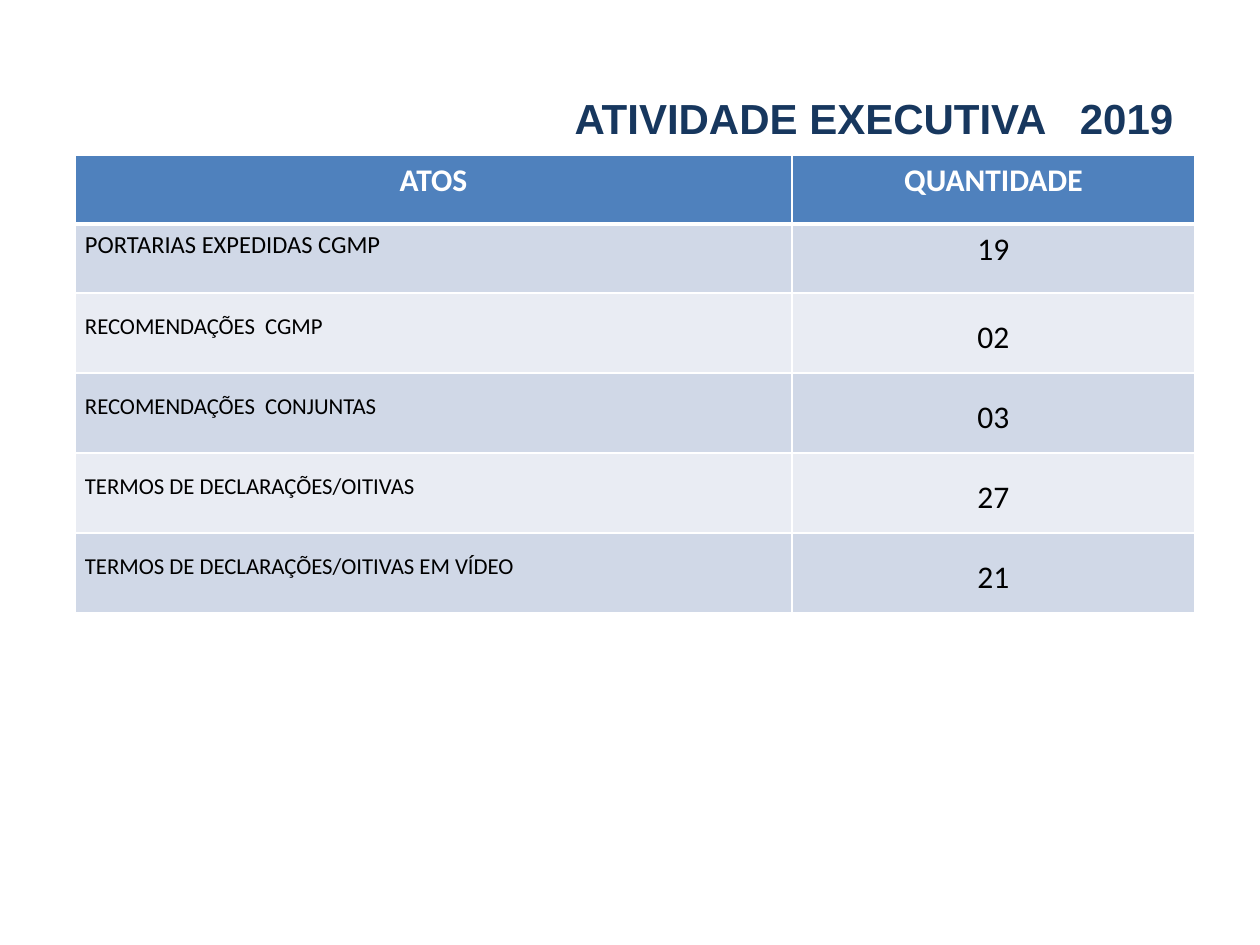
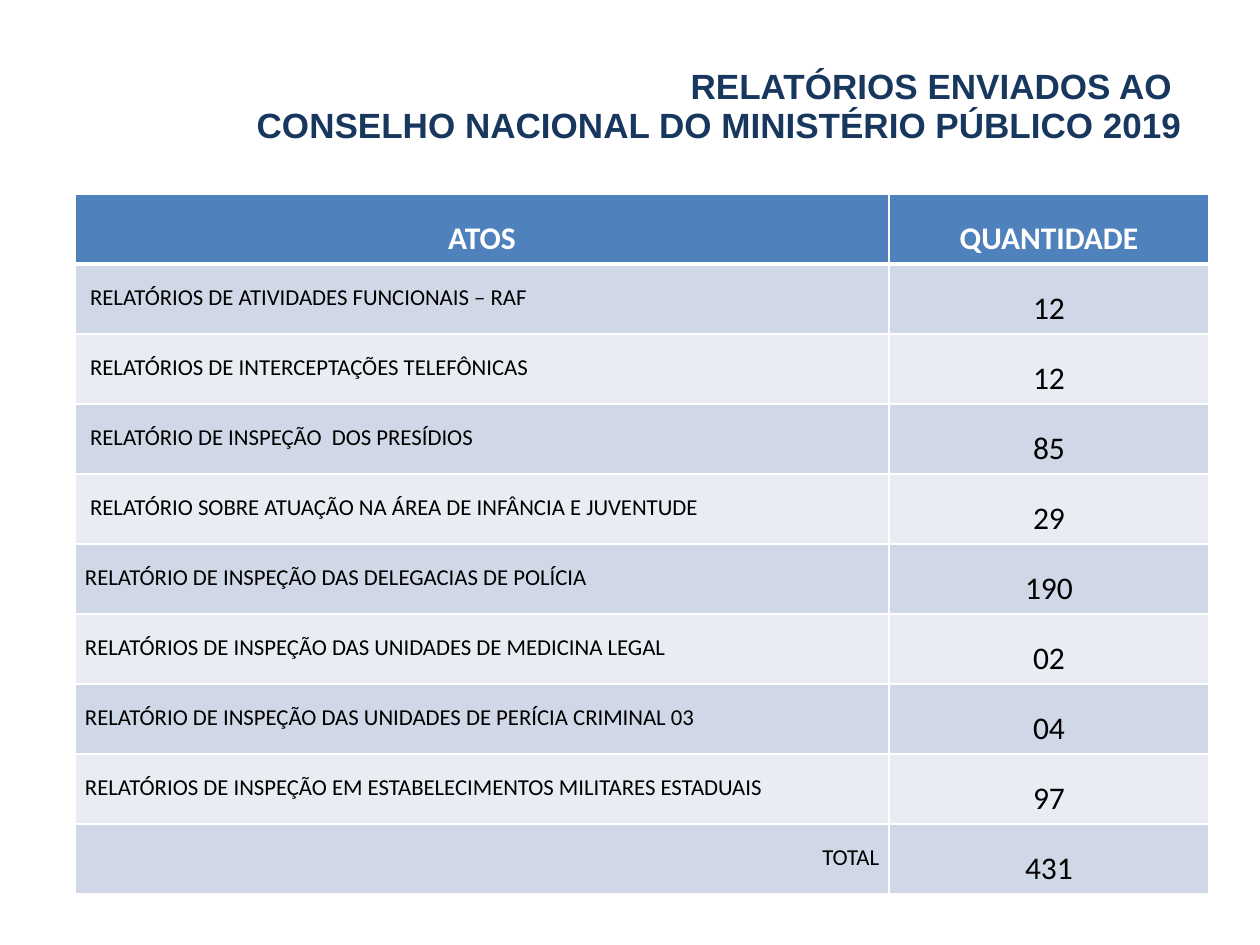
from pptx import Presentation
from pptx.dml.color import RGBColor
from pptx.enum.text import MSO_ANCHOR as Anchor, PP_ALIGN as Align
from pptx.oxml import parse_xml
from pptx.oxml.ns import nsdecls
from pptx.util import Pt

PX = 914400 / 126
NAVY, BLUE, WHITE, BLACK = "17375E", "4F81BD", "FFFFFF", "000000"
BANDS = ["D0D8E7", "E9ECF3"]
THIN, THICK = 0.96, 3


def style(para, align, gap, hue, **form):
    """Set one paragraph's alignment, line spacing and font."""
    para.alignment, para.line_spacing = align, gap
    para.font.color.rgb = RGBColor.from_string(hue)
    for key, value in form.items():
        setattr(para.font, key, value)


def edge(cell, side, width):
    """Draw one white cell border."""
    cell._tc.get_or_add_tcPr().append(parse_xml(
        f'<a:ln{side} {nsdecls("a")} w="{Pt(width)}"><a:solidFill>'
        f'<a:srgbClr val="{WHITE}"/></a:solidFill></a:ln{side}>'))


# Slide content; "tight" counts the leading rows with single line spacing
pages = [
    {"title": "ATIVIDADE EXECUTIVA   2019", "size": 24,
     "box": (64, 65, 1122, 110), "top": 155, "cols": (717, 403),
     "high": (69, 69, 80, 80, 80, 80), "tight": 2,
     "rows": [
         ("PORTARIAS EXPEDIDAS CGMP", "19"),
         ("RECOMENDAÇÕES  CGMP", "02"),
         ("RECOMENDAÇÕES  CONJUNTAS", "03"),
         ("TERMOS DE DECLARAÇÕES/OITIVAS", "27"),
         ("TERMOS DE DECLARAÇÕES/OITIVAS EM VÍDEO", "21")]},
    {"title": "RELATÓRIOS ENVIADOS AO \vCONSELHO NACIONAL DO MINISTÉRIO PÚBLICO 2019",
     "size": 20, "box": (123, 65, 1071, 85), "top": 194, "cols": (814, 320),
     "high": (70,) * 10, "tight": 0,
     "rows": [
         (" RELATÓRIOS DE ATIVIDADES FUNCIONAIS – RAF", "12"),
         (" RELATÓRIOS DE INTERCEPTAÇÕES TELEFÔNICAS", "12"),
         (" RELATÓRIO DE INSPEÇÃO  DOS PRESÍDIOS", "85"),
         (" RELATÓRIO SOBRE ATUAÇÃO NA ÁREA DE INFÂNCIA E JUVENTUDE", "29"),
         ("RELATÓRIO DE INSPEÇÃO DAS DELEGACIAS DE POLÍCIA", "190"),
         ("RELATÓRIOS DE INSPEÇÃO DAS UNIDADES DE MEDICINA LEGAL", "02"),
         ("RELATÓRIO DE INSPEÇÃO DAS UNIDADES DE PERÍCIA CRIMINAL 03", "04"),
         ("RELATÓRIOS DE INSPEÇÃO EM ESTABELECIMENTOS MILITARES ESTADUAIS", "97"),
         ("TOTAL", "431")]},
]

deck = Presentation()
deck.slide_width, deck.slide_height = int(1260 * PX), int(945 * PX)

for page in pages:
    slide = deck.slides.add_slide(deck.slide_layouts[6])

    # Title
    box = slide.shapes.add_textbox(*(int(n * PX) for n in page["box"]))
    frame = box.text_frame
    frame.word_wrap, frame.vertical_anchor = True, Anchor.MIDDLE
    frame.text = page["title"]
    style(frame.paragraphs[0], Align.RIGHT, 0.93, NAVY,
          name="Arial", size=Pt(page["size"]), bold=True)

    # Table grid
    rows = [("ATOS", "QUANTIDADE")] + page["rows"]
    spot = (75, page["top"], sum(page["cols"]), sum(page["high"]))
    table = slide.shapes.add_table(len(rows), 2, *(int(n * PX) for n in spot)).table
    for col, wide in zip(table.columns, page["cols"]):
        col.width = int(wide * PX)
    for row, high in zip(table.rows, page["high"]):
        row.height = int(high * PX)

    # Cells
    for r, row in enumerate(rows):
        head, tight = r == 0, r < page["tight"]
        for c, text in enumerate(row):
            cell = table.cell(r, c)
            label = c == 0 and not head
            for side in "LRTB":
                heavy = (r, side) in [(0, "B"), (1, "T")]
                edge(cell, side, THICK if heavy else THIN)
            cell.fill.solid()
            cell.fill.fore_color.rgb = RGBColor.from_string(
                BLUE if head else BANDS[(r - 1) % 2])
            cell.margin_left = cell.margin_right = int((10 if label else 14) * PX)
            cell.text = text
            align = Align.CENTER
            if label:
                align = Align.RIGHT if text == "TOTAL" else Align.LEFT
            size = (14 if tight else 13) if label else 18
            style(cell.text_frame.paragraphs[0], align, 1.0 if tight else 1.5,
                  WHITE if head else BLACK, name="Calibri", size=Pt(size), bold=head)

deck.save("out.pptx")
